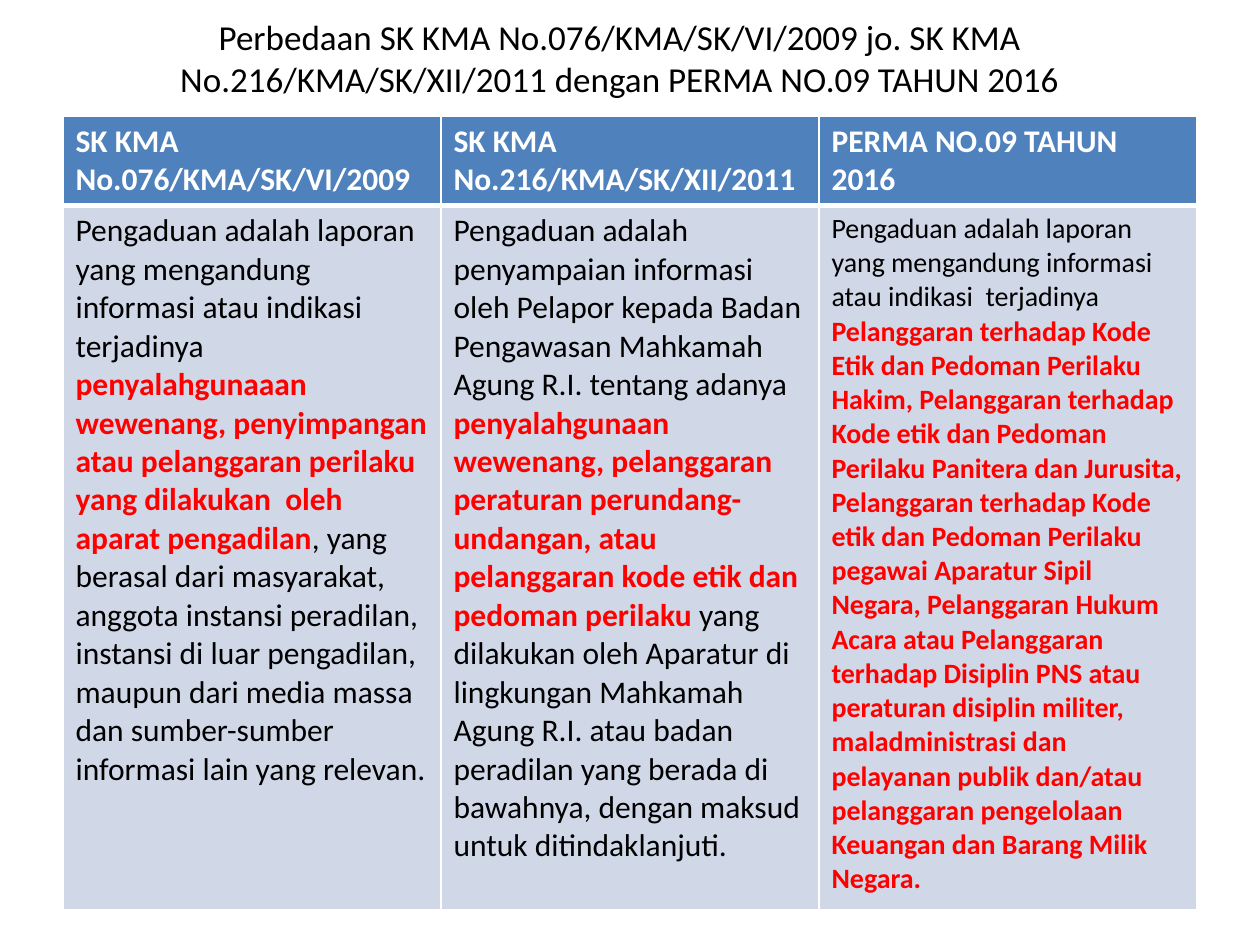
import pptx
import pptx.dml.color
import pptx.enum.text
import pptx.oxml
import pptx.oxml.ns
import pptx.util

Inches = pptx.util.Inches
RGBColor = pptx.dml.color.RGBColor

BLACK = RGBColor(0x00, 0x00, 0x00)
WHITE = RGBColor(0xFF, 0xFF, 0xFF)
RED = RGBColor(0xFF, 0x00, 0x00)
HEADER_BLUE = RGBColor(0x4F, 0x81, 0xBD)
BODY_BLUE = RGBColor(0xD0, 0xD8, 0xE8)

TITLE = ("Perbedaan SK KMA No.076/KMA/SK/VI/2009 jo. SK KMA "
         "No.216/KMA/SK/XII/2011 dengan PERMA NO.09 TAHUN 2016")

# Each regulation: heading, body size, and body pieces that alternate plain and highlighted.
REGULATIONS = [
    ("SK KMA No.076/KMA/SK/VI/2009", 18, [
        "Pengaduan adalah laporan yang mengandung informasi atau indikasi terjadinya ",
        "penyalahgunaaan wewenang, penyimpangan atau pelanggaran perilaku "
        "yang dilakukan  oleh aparat pengadilan",
        ", yang berasal dari masyarakat, anggota instansi peradilan, instansi di luar "
        "pengadilan, maupun dari media massa dan sumber-sumber informasi lain yang relevan.",
    ]),
    ("SK KMA No.216/KMA/SK/XII/2011", 18, [
        "Pengaduan adalah penyampaian informasi oleh Pelapor kepada Badan Pengawasan "
        "Mahkamah Agung R.I. tentang adanya ",
        "penyalahgunaan wewenang, pelanggaran peraturan perundang-undangan, "
        "atau pelanggaran kode etik dan pedoman perilaku ",
        "yang dilakukan oleh Aparatur di lingkungan Mahkamah Agung R.I. atau badan "
        "peradilan yang berada di bawahnya, dengan maksud untuk ditindaklanjuti.",
    ]),
    ("PERMA NO.09 TAHUN 2016", 16, [
        "Pengaduan adalah laporan yang mengandung informasi atau indikasi  terjadinya ",
        "Pelanggaran terhadap Kode Etik dan Pedoman Perilaku Hakim, Pelanggaran terhadap "
        "Kode etik dan Pedoman Perilaku Panitera dan Jurusita, Pelanggaran terhadap Kode "
        "etik dan Pedoman Perilaku pegawai Aparatur Sipil Negara, Pelanggaran Hukum Acara "
        "atau Pelanggaran terhadap Disiplin PNS atau peraturan disiplin militer, "
        "maladministrasi dan pelayanan publik dan/atau pelanggaran pengelolaan Keuangan "
        "dan Barang Milik Negara.",
    ]),
]


def add_text(paragraph, text, size=18, color=BLACK, bold=False):
    run = paragraph.add_run()
    run.text = text
    run.font.name = "Calibri"
    run.font.size = pptx.util.Pt(size)
    run.font.color.rgb = color
    run.font.bold = bold


def format_cell(cell, fill, top=1, bottom=1):
    """Fill the cell and give it white borders; top and bottom are widths in points."""
    properties = cell._tc.get_or_add_tcPr()
    for side, width in (("L", 1), ("R", 1), ("T", top), ("B", bottom)):
        properties.append(pptx.oxml.parse_xml(
            f'<a:ln{side} {pptx.oxml.ns.nsdecls("a")} w="{pptx.util.Pt(width)}">'
            f'<a:solidFill><a:srgbClr val="{WHITE}"/></a:solidFill></a:ln{side}>'))
    cell.fill.solid()
    cell.fill.fore_color.rgb = fill


def place_title(slide, left, top, width, height):
    title = slide.shapes.title
    title.left, title.top, title.width, title.height = left, top, width, height
    title.text_frame.vertical_anchor = pptx.enum.text.MSO_ANCHOR.MIDDLE
    paragraph = title.text_frame.paragraphs[0]
    paragraph.alignment = pptx.enum.text.PP_ALIGN.CENTER
    add_text(paragraph, TITLE, size=20)


def add_comparison_table(slide, left, top, width, height):
    table = slide.shapes.add_table(2, len(REGULATIONS), left, top, width, height).table
    header_height = Inches(0.61)
    table.rows[0].height = header_height
    table.rows[1].height = height - header_height
    for column, (heading, size, pieces) in enumerate(REGULATIONS):
        header, body = table.cell(0, column), table.cell(1, column)
        format_cell(header, HEADER_BLUE, bottom=3)
        format_cell(body, BODY_BLUE, top=3)
        add_text(header.text_frame.paragraphs[0], heading, color=WHITE, bold=True)
        for index, piece in enumerate(pieces):
            highlighted = index % 2 == 1
            add_text(body.text_frame.paragraphs[0], piece, size=size,
                     color=RED if highlighted else BLACK, bold=highlighted)


def main():
    presentation = pptx.Presentation()
    presentation.slide_width, presentation.slide_height = Inches(10), Inches(7.5)
    slide = presentation.slides.add_slide(presentation.slide_layouts.get_by_name("Title Only"))
    place_title(slide, Inches(0.67), Inches(0), Inches(8.5), Inches(0.92))
    add_comparison_table(slide, Inches(0.5), Inches(0.92), Inches(9), Inches(6.2))
    presentation.save("out.pptx")


if __name__ == "__main__":
    main()
